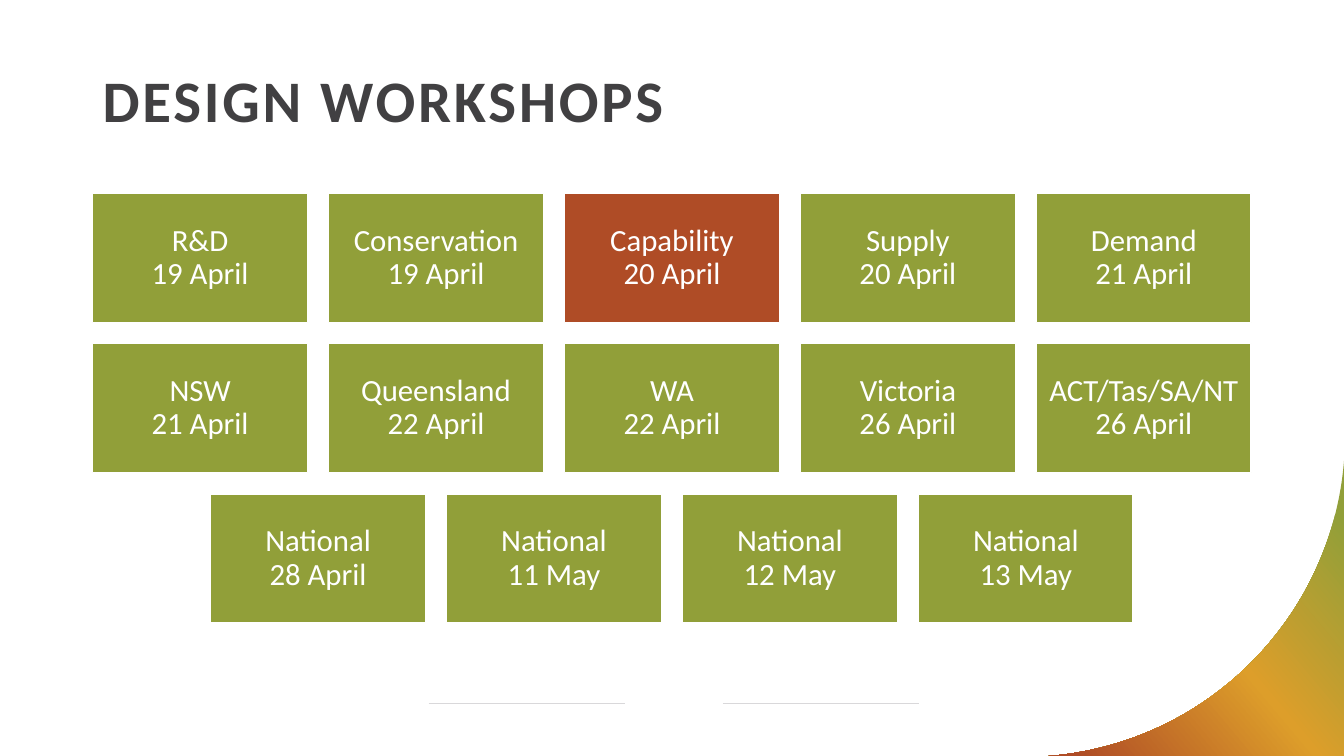
from copy import deepcopy
from math import cos, pi, sin

from pptx import Presentation
from pptx.dml.color import RGBColor
from pptx.enum.shapes import MSO_CONNECTOR, MSO_SHAPE
from pptx.enum.text import MSO_ANCHOR, PP_ALIGN
from pptx.oxml.ns import qn
from pptx.util import Inches, Pt

RECT = MSO_SHAPE.RECTANGLE
LINE = MSO_CONNECTOR.STRAIGHT
MIDDLE = MSO_ANCHOR.MIDDLE
CENTER = PP_ALIGN.CENTER

TITLE = "DESIGN WORKSHOPS"
ROWS = [
    [("R&D", "19 April"), ("Conservation", "19 April"), ("Capability", "20 April"),
     ("Supply", "20 April"), ("Demand", "21 April")],
    [("NSW", "21 April"), ("Queensland", "22 April"), ("WA", "22 April"),
     ("Victoria", "26 April"), ("ACT/Tas/SA/NT", "26 April")],
    [("National", "28 April"), ("National", "11 May"), ("National", "12 May"),
     ("National", "13 May")],
]
ACCENT = "Capability"
GREEN, GOLD, RUST = "919F39", "DD9E2A", "AF4C26"
WHITE, DARK, GREY = "FFFFFF", "414042", "D9D8DA"
FADE = [(0.12, GREEN), (0.5, GOLD), (0.91, RUST)]
RULES = [4.25, 7.17]
RULE_Y, RULE_W = 6.98, 1.95
WIDE, HIGH = 13.33, 7.5
CARD_W, CARD_H = 2.13, 1.28
STEP_X, STEP_Y, TOP = 2.34, 1.49, 1.92
CURVE_X, CURVE_Y, RADIUS, PARTS = 10.15, 4.32, 3.19, 90


def color(code):
    return RGBColor.from_string(code)


def style(para, size, code, bold=False):
    para.line_spacing = 0.9
    para.font.name = "Calibri"
    para.font.size = Pt(size)
    para.font.bold = bold
    para.font.color.rgb = color(code)


def add_rule(slide, left):
    rule = slide.shapes.add_connector(
        LINE, Inches(left), Inches(RULE_Y), Inches(left + RULE_W), Inches(RULE_Y))
    rule.line.color.rgb = color(GREY)
    rule.line.width = Pt(0.5)
    props = rule._element.spPr
    props.append(props.makeelement(qn("a:effectLst"), {}))


def add_corner(slide):
    turns = [pi / 2 * i / PARTS for i in range(PARTS + 1)]
    arc = [(Inches(CURVE_X + RADIUS * cos(t)), Inches(CURVE_Y + RADIUS * sin(t)))
           for t in turns]
    edge = Inches(CURVE_X + RADIUS), Inches(CURVE_Y + RADIUS)
    draft = slide.shapes.build_freeform(*edge)
    draft.add_line_segments(arc, close=True)
    corner = draft.convert_to_shape()
    corner.shadow.inherit = False
    corner.line.fill.background()
    corner.fill.gradient()
    corner.fill.gradient_angle = 220
    stops = corner._element.spPr.find(".//" + qn("a:gsLst"))
    stops.append(deepcopy(stops[0]))
    for stop, (place, code) in zip(corner.fill.gradient_stops, FADE):
        stop.position = place
        stop.color.rgb = color(code)


def add_title(slide):
    box = slide.shapes.add_textbox(Inches(0.92), Inches(0.66), Inches(11.5), Inches(1.02))
    box.text_frame.word_wrap = True
    para = box.text_frame.paragraphs[0]
    para.text = TITLE
    style(para, 42, DARK, True)
    para.runs[0]._r.get_or_add_rPr().set("spc", "200")


def add_card(slide, left, top, name, date):
    card = slide.shapes.add_shape(
        RECT, Inches(left), Inches(top), Inches(CARD_W), Inches(CARD_H))
    card.shadow.inherit = False
    card.fill.solid()
    card.fill.fore_color.rgb = color(RUST if name == ACCENT else GREEN)
    card.line.color.rgb = color(WHITE)
    card.line.width = Pt(1)
    frame = card.text_frame
    frame.word_wrap = True
    frame.vertical_anchor = MIDDLE
    frame.margin_left = frame.margin_right = Inches(0.09)
    frame.margin_top = frame.margin_bottom = Inches(0.09)
    para = frame.paragraphs[0]
    para.text = f"{name}\v{date}"
    para.alignment = CENTER
    style(para, 22, WHITE)


def main():
    deck = Presentation()
    deck.slide_width, deck.slide_height = Inches(WIDE), Inches(HIGH)
    slide = deck.slides.add_slide(deck.slide_layouts[6])
    for left in RULES:
        add_rule(slide, left)
    add_corner(slide)
    add_title(slide)
    for row, cards in enumerate(ROWS):
        start = (WIDE - CARD_W - STEP_X * (len(cards) - 1)) / 2
        for col, (name, date) in enumerate(cards):
            add_card(slide, start + col * STEP_X, TOP + row * STEP_Y, name, date)
    deck.save("out.pptx")


if __name__ == "__main__":
    main()
